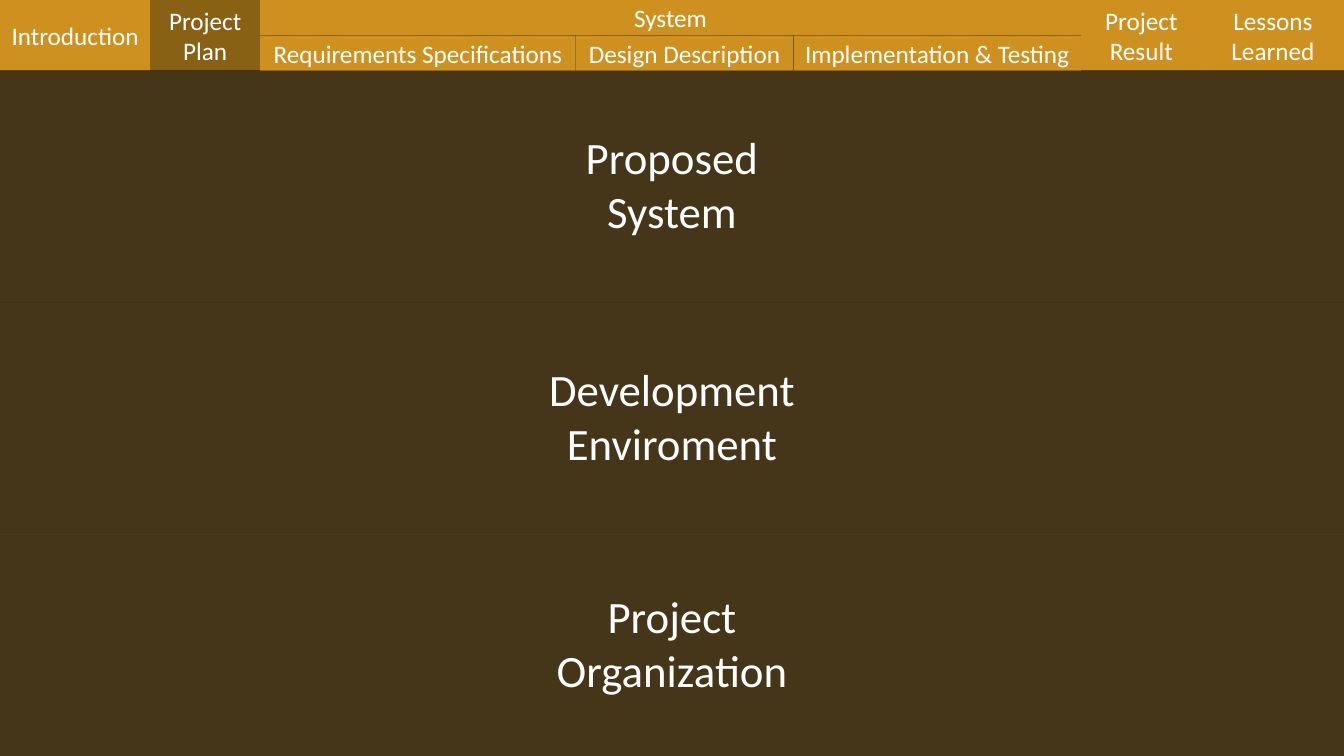
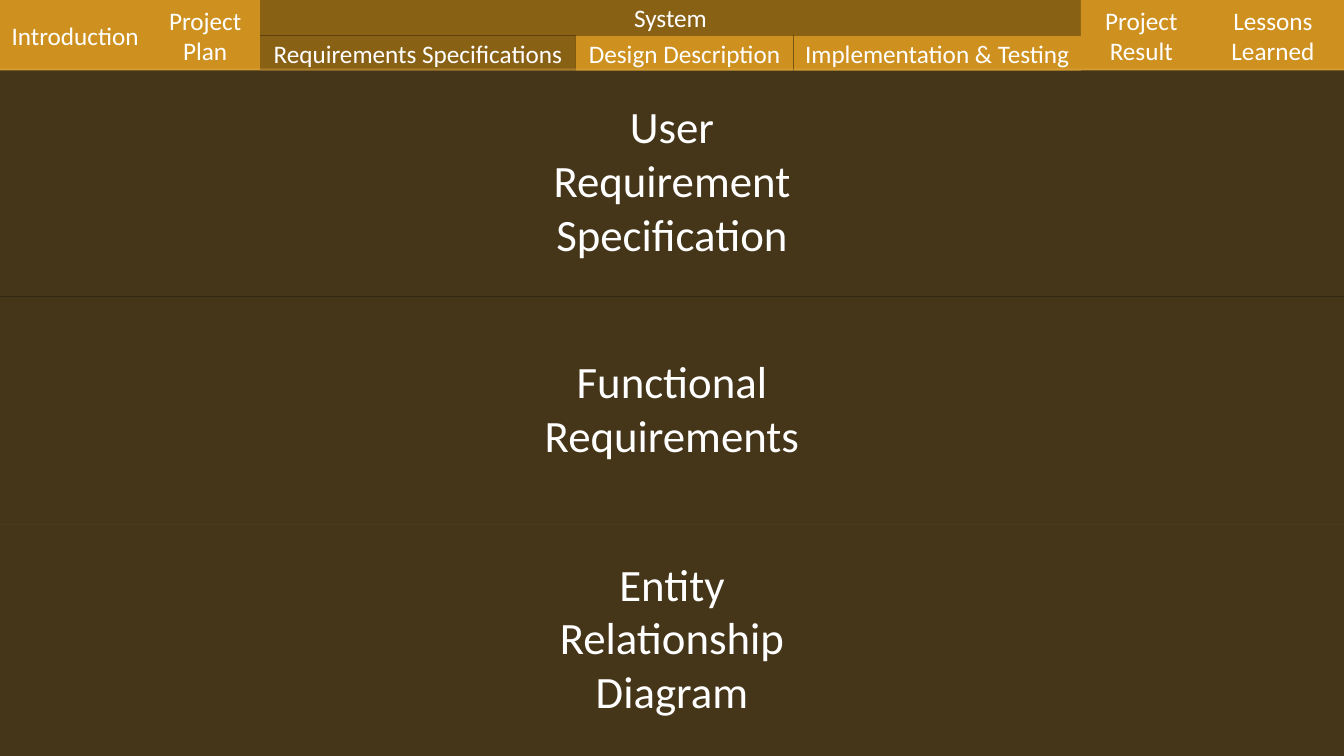
from pptx import Presentation
from pptx.dml.color import RGBColor
from pptx.enum.shapes import MSO_SHAPE
from pptx.enum.text import MSO_ANCHOR, MSO_AUTO_SIZE, PP_ALIGN
from pptx.oxml.ns import qn
from pptx.util import Inches, Pt
from lxml.etree import SubElement

COLORS = {
    "background": "000000",
    "tab": "CE9120",
    "active": "896115",
    "panel": "E5B458",
    "text": "FFFFFF",
}
FONT = "Calibri"
SLIDE_WIDTH, SLIDE_HEIGHT = 13.33, 7.5
TAB_HEIGHT = 0.7
PANEL_OPACITY = 30
LINE_HEIGHT, BOX_PADDING, LABEL_RISE = 0.54, 0.1, 0.02

TABS = [
    ("Introduction", 0, 1.49, "full"),
    ("Project Plan", 1.49, 2.58, "full"),
    ("System", 2.58, 10.72, "upper"),
    ("Requirements Specifications", 2.58, 5.71, "lower"),
    ("Design Description", 5.71, 7.87, "lower"),
    ("Implementation & Testing", 7.87, 10.72, "lower"),
    ("Project Result", 10.72, 11.92, "full"),
    ("Lessons Learned", 11.92, SLIDE_WIDTH, "full"),
]
TAB_ROWS = {
    "full": (0, TAB_HEIGHT),
    "upper": (0, TAB_HEIGHT / 2),
    "lower": (TAB_HEIGHT / 2, TAB_HEIGHT / 2),
}

SLIDES = [
    {
        "active": ["Project Plan"],
        "panels": [
            (0.7, 1.93, ["Proposed", "System"]),
            (3, 2.66, ["Development", "Enviroment"]),
            (5.3, 2.52, ["Project", "Organization"]),
        ],
    },
    {
        "active": ["System", "Requirements Specifications"],
        "panels": [
            (0.68, 2.58, ["User", "Requirement", "Specification"]),
            (2.94, 2.75, ["Functional", "Requirements"]),
            (5.2, 2.45, ["Entity", "Relationship", "Diagram"]),
        ],
    },
]


def color(name):
    return RGBColor.from_string(COLORS[name])


def add_rectangle(slide, left, top, width, height, fill):
    shape = slide.shapes.add_shape(
        MSO_SHAPE.RECTANGLE, Inches(left), Inches(top), Inches(width), Inches(height)
    )
    shape.shadow.inherit = False
    shape.fill.solid()
    shape.fill.fore_color.rgb = color(fill)
    shape.line.fill.background()
    return shape


def write_lines(text_frame, lines, size):
    text_frame.text = "\n".join(lines)
    for paragraph in text_frame.paragraphs:
        paragraph.alignment = PP_ALIGN.CENTER
        paragraph.font.name = FONT
        paragraph.font.size = Pt(size)
        paragraph.font.color.rgb = color("text")


def add_tabs(slide, active):
    for label, left, right, row in TABS:
        top, height = TAB_ROWS[row]
        fill = "active" if label in active else "tab"
        tab = add_rectangle(slide, left, top, right - left, height, fill)
        tab.text_frame.word_wrap = True
        tab.text_frame.vertical_anchor = MSO_ANCHOR.MIDDLE
        write_lines(tab.text_frame, [label], 18)


def add_panel(slide, top, bottom):
    panel = add_rectangle(slide, 0, top, SLIDE_WIDTH, bottom - top, "panel")
    fill_color = panel.fill._xPr.find(qn("a:solidFill")).find(qn("a:srgbClr"))
    SubElement(fill_color, qn("a:alpha")).set("val", str(PANEL_OPACITY * 1000))


def add_label(slide, top, bottom, width, lines):
    height = BOX_PADDING + LINE_HEIGHT * len(lines)
    label = slide.shapes.add_textbox(
        Inches((SLIDE_WIDTH - width) / 2),
        Inches((top + bottom - height) / 2 - LABEL_RISE),
        Inches(width),
        Inches(height),
    )
    label.text_frame.word_wrap = False
    label.text_frame.auto_size = MSO_AUTO_SIZE.SHAPE_TO_FIT_TEXT
    write_lines(label.text_frame, lines, 32)


def main():
    presentation = Presentation()
    presentation.slide_width = Inches(SLIDE_WIDTH)
    presentation.slide_height = Inches(SLIDE_HEIGHT)
    background = presentation.slide_master.background.fill
    background.solid()
    background.fore_color.rgb = color("background")

    for content in SLIDES:
        slide = presentation.slides.add_slide(presentation.slide_layouts[6])
        add_tabs(slide, content["active"])
        panels = content["panels"]
        bottoms = [top for top, _, _ in panels[1:]] + [SLIDE_HEIGHT]
        for (top, width, lines), bottom in zip(panels, bottoms):
            add_panel(slide, top, bottom)
            add_label(slide, top, bottom, width, lines)

    presentation.save("out.pptx")


if __name__ == "__main__":
    main()
